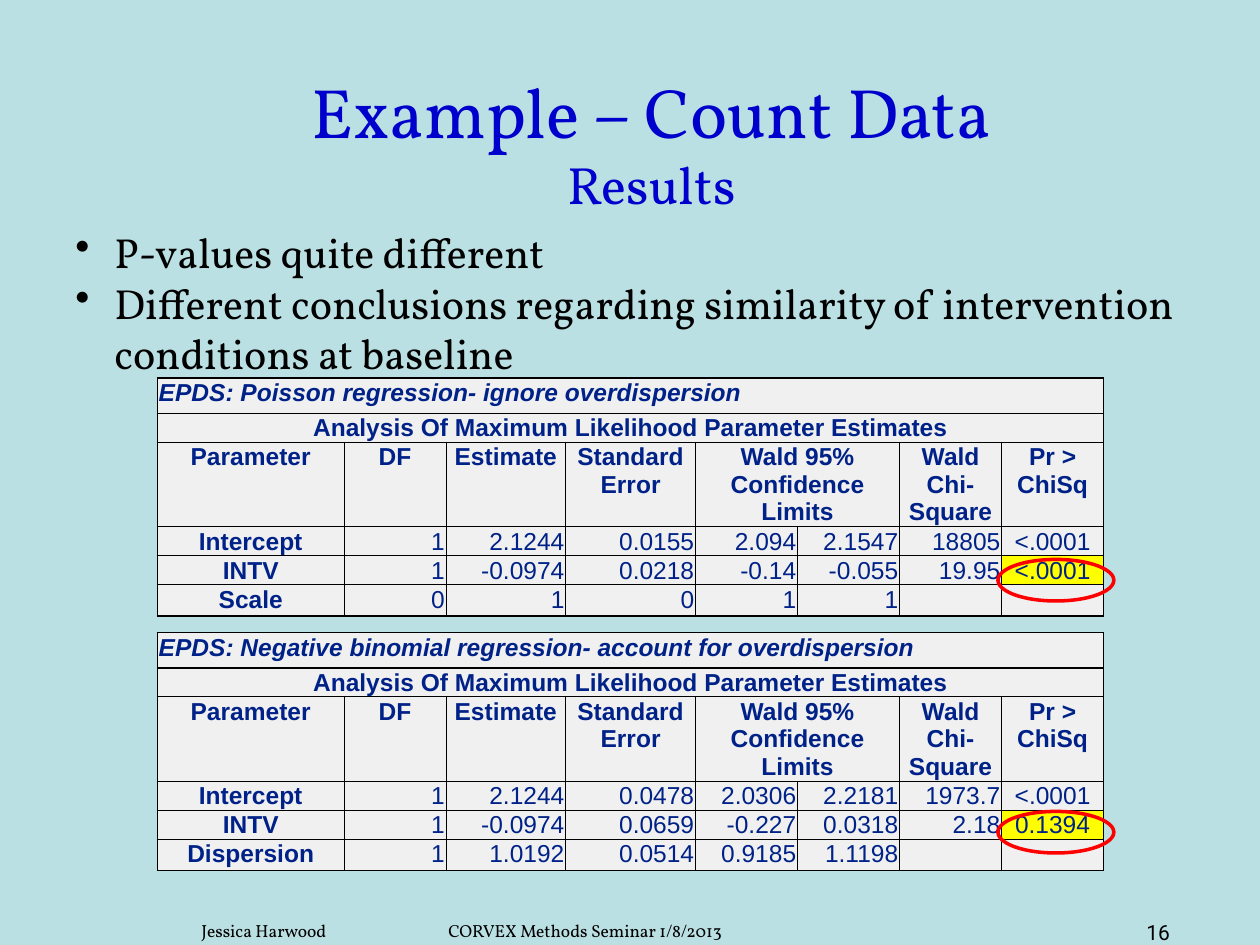
from lxml import etree
from pptx import Presentation
from pptx import util as u
from pptx.dml.color import RGBColor
from pptx.enum import shapes, text
from pptx.oxml.ns import qn

COLORS = {"background": "BBE0E3", "title": "0000CC", "body": "000000",
          "table": "002288", "cell": "F0F0F0", "highlight": "FFFF00",
          "border": "000000", "circle": "FF0000"}
COLUMNS = [1.48, 0.81, 0.95, 1.03] + [0.81] * 4
ROWS = [0.28, 0.23, 0.67, 0.23, 0.23, 0.25]
SUBTITLE = "Analysis Of Maximum Likelihood Parameter Estimates"
HEADINGS = ["Parameter", "DF", "Estimate", "Standard Error",
            "Wald 95% Confidence Limits", "", "Wald Chi-Square", "Pr > ChiSq"]
MODELS = [
    (3, 4.44, "EPDS: Poisson regression- ignore overdispersion", [
        ["Intercept", "1", "2.1244", "0.0155", "2.094", "2.1547", "18805", "<.0001"],
        ["INTV", "1", "-0.0974", "0.0218", "-0.14", "-0.055", "19.95", "<.0001"],
        ["Scale", "0", "1", "0", "1", "1", "", ""]]),
    (5.02, 6.44, "EPDS: Negative binomial regression- account for overdispersion", [
        ["Intercept", "1", "2.1244", "0.0478", "2.0306", "2.2181", "1973.7", "<.0001"],
        ["INTV", "1", "-0.0974", "0.0659", "-0.227", "0.0318", "2.18", "0.1394"],
        ["Dispersion", "1", "1.0192", "0.0514", "0.9185", "1.1198", "", ""]]),
]


def rgb(name):
    return RGBColor.from_string(COLORS[name])


class SlideBuilder:
    """Hold the style and the current slide, and draw each kind of element."""

    def __init__(self, prs):
        self.s = prs.slides.add_slide(prs.slide_layouts[6])
        self.s.background.fill.solid()
        self.s.background.fill.fore_color.rgb = rgb("background")

    def run(self, p, content, size, color, font="Vollkorn", bold=False, italic=False):
        r = p.add_run()
        r.text = content
        r.font.size, r.font.name = u.Pt(size), font
        r.font.bold, r.font.italic = bold, italic
        r.font.color.rgb = rgb(color)

    def textbox(self, box, lines, color="body", font="Vollkorn", align=None,
                anchor=text.MSO_ANCHOR.TOP, bullet=False, tab=None):
        tf = self.s.shapes.add_textbox(*map(u.Inches, box)).text_frame
        tf.word_wrap = True
        tf.vertical_anchor = anchor
        for i, (content, size) in enumerate(lines):
            p = tf.add_paragraph() if i else tf.paragraphs[0]
            p.alignment = align
            self.run(p, content, size, color, font)
            pPr = p._p.get_or_add_pPr()
            if bullet:
                pPr.set("marL", str(u.Inches(0.31)))
                pPr.set("indent", str(-u.Inches(0.31)))
                etree.SubElement(pPr, qn("a:buChar"), char="•")
            if tab:
                stops = etree.SubElement(pPr, qn("a:tabLst"))
                etree.SubElement(stops, qn("a:tab"), pos=str(u.Inches(tab)), algn="l")

    def borders(self, cell, widths):
        tcPr = cell._tc.get_or_add_tcPr()
        for i, (side, width) in enumerate(zip("LRTB", widths)):
            ln = etree.Element(qn(f"a:ln{side}"), w=str(u.Pt(width)))
            fill = etree.SubElement(ln, qn("a:solidFill"))
            etree.SubElement(fill, qn("a:srgbClr"), val=COLORS["border"])
            tcPr.insert(i, ln)

    def cell(self, cell, row, col, content):
        cell.margin_left = cell.margin_top = cell.margin_right = u.Inches(0.01)
        cell.margin_bottom = 0
        last_row, last_col = len(ROWS) - 1, len(COLUMNS) - 1
        cell.fill.solid()
        marked = (row, col) == (last_row - 1, last_col)
        cell.fill.fore_color.rgb = rgb("highlight" if marked else "cell")
        heavy = (col == 0 or row == 0, col == last_col or row == 0,
                 row < 2, row in (0, last_row))
        self.borders(cell, [1 if edge else 0.5 for edge in heavy])
        p = cell.text_frame.paragraphs[0]
        if not content:
            p._p.get_or_add_endParaRPr().set("sz", "1400")
            return
        if row:
            number = row > 2 and 0 < col < last_col
            p.alignment = text.PP_ALIGN.RIGHT if number else text.PP_ALIGN.CENTER
        self.run(p, content, 14, "table", "Arial", row < 3 or col == 0, row == 0)

    def table(self, top, title, values):
        blanks = [""] * (len(COLUMNS) - 1)
        grid = [[title] + blanks, [SUBTITLE] + blanks, HEADINGS] + values
        table = self.s.shapes.add_table(
            len(ROWS), len(COLUMNS), u.Inches(1.25), u.Inches(top),
            u.Inches(sum(COLUMNS)), u.Inches(sum(ROWS))).table
        table.first_row = table.horz_banding = False
        for column, width in zip(table.columns, COLUMNS):
            column.width = u.Inches(width)
        for row, height in zip(table.rows, ROWS):
            row.height = u.Inches(height)
        for row, contents in enumerate(grid):
            for col, content in enumerate(contents):
                self.cell(table.cell(row, col), row, col, content)
        for row, first, last in ((0, 0, 7), (1, 0, 7), (2, 4, 5)):
            table.cell(row, first).merge(table.cell(row, last))

    def circle(self, top):
        sp = self.s.shapes.add_shape(shapes.MSO_SHAPE.OVAL, u.Inches(7.92),
                                     u.Inches(top), u.Inches(0.92), u.Inches(0.33))
        sp.shadow.inherit = False
        sp.fill.background()
        sp.line.color.rgb = rgb("circle")
        sp.line.width = u.Pt(2)


def main():
    prs = Presentation()
    prs.slide_width, prs.slide_height = u.Inches(10), u.Inches(7.5)
    slide = SlideBuilder(prs)
    for top, circle_top, title, values in MODELS:
        slide.table(top, title, values)
        slide.circle(circle_top)
    slide.textbox((0.67, 0.5, 9, 1.25), [("Example – Count Data", 40), ("Results", 30)],
                  "title", align=text.PP_ALIGN.CENTER, anchor=text.MSO_ANCHOR.MIDDLE)
    slide.textbox((0.5, 1.75, 9, 1.31), [
        ("P-values quite different", 24),
        ("Different conclusions regarding similarity of intervention "
         "conditions at baseline", 24)], bullet=True)
    slide.textbox((1.5, 7.25, 7.33, 0.22),
                  [("Jessica Harwood\tCORVEX Methods Seminar 1/8/2013", 10)], tab=1.96)
    slide.textbox((9, 7.25, 0.67, 0.3), [("16", 12)], font="Roboto")
    prs.save("out.pptx")


if __name__ == "__main__":
    main()
